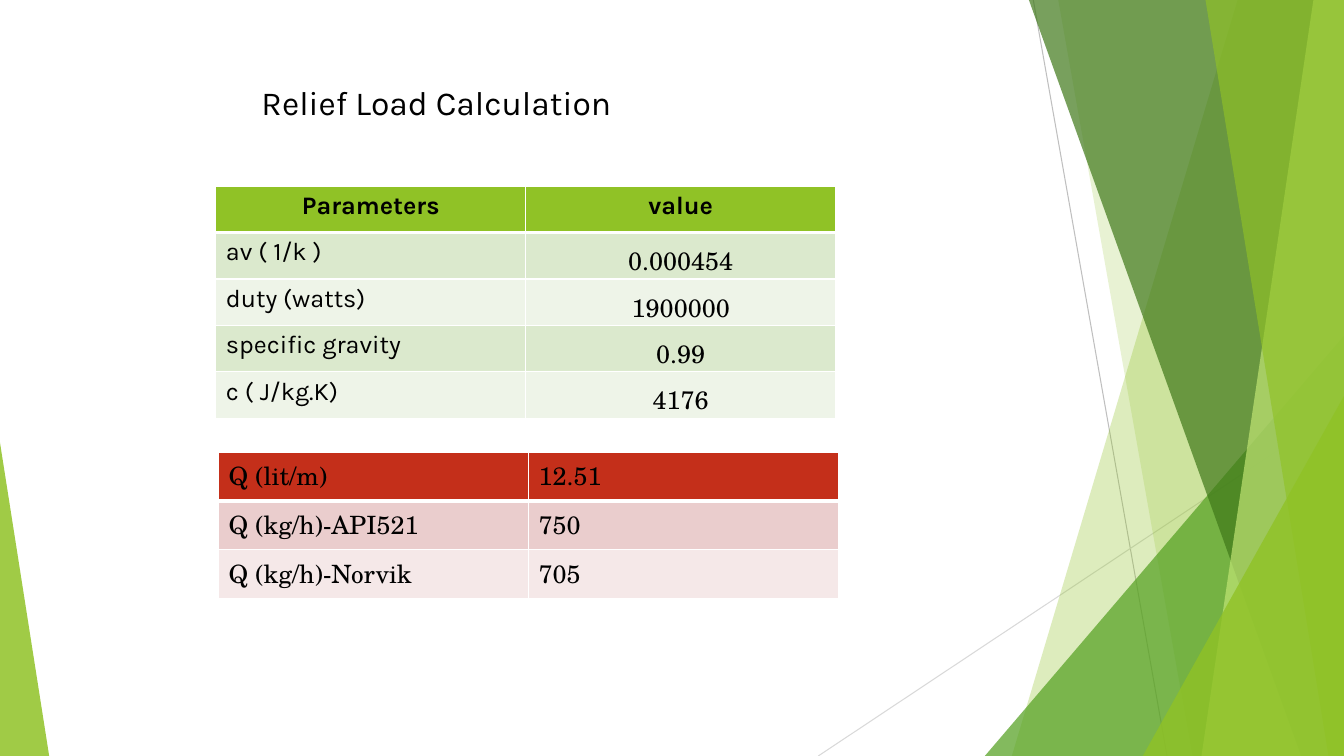
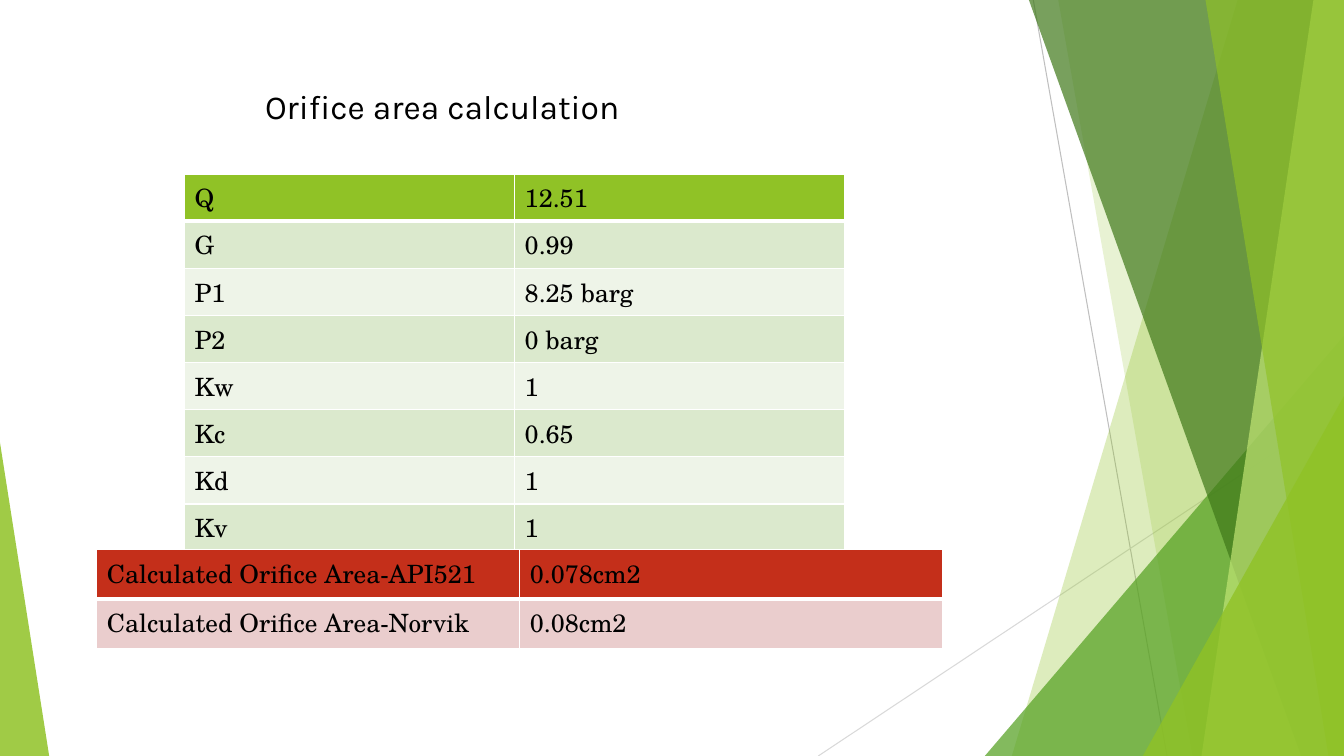
from lxml.etree import SubElement
from pptx import Presentation
from pptx.dml.color import RGBColor
from pptx.enum.shapes import MSO_CONNECTOR, MSO_SHAPE
from pptx.enum.text import MSO_ANCHOR, MSO_AUTO_SIZE, PP_ALIGN
from pptx.oxml.ns import qn
from pptx.util import Cm, Pt

BLACK = RGBColor(0x00, 0x00, 0x00)
WHITE = RGBColor(0xFF, 0xFF, 0xFF)
LIME = RGBColor(0x90, 0xC2, 0x26)
PALE_LIME = RGBColor(0xC0, 0xE4, 0x74)
GREEN = RGBColor(0x54, 0xA0, 0x21)
DARK_GREEN = RGBColor(0x3F, 0x78, 0x19)
GREY = RGBColor(0xBF, 0xBF, 0xBF)
LIGHT_GREY = RGBColor(0xD9, 0xD9, 0xD9)
GREEN_THEME = (LIME, RGBColor(0xDB, 0xE9, 0xCD), RGBColor(0xEE, 0xF4, 0xE8))
RED_THEME = (RGBColor(0xC4, 0x2F, 0x1A), RGBColor(0xEA, 0xCD, 0xCD), RGBColor(0xF5, 0xE8, 0xE8))
SANS = "Karla"
SERIF = "TeX Gyre Schola"
WIDTH, HEIGHT = 33.87, 19.05


def paint(shape, color, opacity):
    """Fill a borderless shape with a partly transparent colour."""
    shape.shadow.inherit = False
    shape.fill.solid()
    shape.fill.fore_color.rgb = color
    shape.line.fill.background()
    color_node = shape.element.spPr.find(".//" + qn("a:srgbClr"))
    SubElement(color_node, qn("a:alpha")).set("val", str(opacity * 1000))


def add_ray(page, start, end, color):
    """Draw a thin straight line."""
    ray = page.shapes.add_connector(MSO_CONNECTOR.STRAIGHT, *map(Cm, start + end))
    ray.line.color.rgb = color
    ray.line.width = Pt(0.75)
    SubElement(ray.element.spPr, qn("a:effectLst"))


def add_band(page, top_x, bottom_x, color, opacity):
    """Fill the full height from a slanted edge to the right side."""
    builder = page.shapes.build_freeform(Cm(top_x), 0)
    corners = [(WIDTH, 0), (WIDTH, HEIGHT), (bottom_x, HEIGHT)]
    builder.add_line_segments([(Cm(x), Cm(y)) for x, y in corners], close=True)
    paint(builder.convert_to_shape(), color, opacity)


def add_wedge(page, left, right, top, apex, color, opacity):
    """Draw a triangle standing on the bottom edge."""
    wedge = page.shapes.add_shape(
        MSO_SHAPE.ISOSCELES_TRIANGLE,
        Cm(left), Cm(top), Cm(right) - Cm(left), Cm(HEIGHT) - Cm(top))
    wedge.adjustments[0] = apex
    paint(wedge, color, opacity)


def add_facets(page):
    """Draw the facets that every slide shares."""
    add_ray(page, (26.04, 0), (29.41, HEIGHT), GREY)
    add_ray(page, (WIDTH, 10.24), (20.62, HEIGHT), LIGHT_GREY)
    add_band(page, 31.19, 25.5, LIME, 30)
    add_band(page, 26.67, 30.05, LIME, 20)
    add_wedge(page, 24.82, WIDTH, 8.46, 1, GREEN, 72)
    add_band(page, 25.93, 32.79, DARK_GREEN, 70)
    add_band(page, 33.1, 30.28, PALE_LIME, 70)
    add_band(page, 30.38, 33.48, LIME, 65)
    add_wedge(page, 28.8, WIDTH, 9.98, 1, LIME, 80)
    add_wedge(page, 0, 1.24, 11.15, 0, LIME, 85)


def add_span(para, text, font, size):
    """Add one black run."""
    span = para.add_run()
    span.text = text
    span.font.name = font
    span.font.size = Pt(size)
    span.font.bold = False
    span.font.color.rgb = BLACK


def set_title(page, text, left, top):
    """Place and format the title placeholder."""
    title = page.shapes.title
    title.left, title.top, title.width, title.height = Cm(left), Cm(top), Cm(16), Cm(1.2)
    frame = title.text_frame
    frame.auto_size = MSO_AUTO_SIZE.NONE
    frame.vertical_anchor = MSO_ANCHOR.MIDDLE
    frame.margin_left = frame.margin_right = frame.margin_top = frame.margin_bottom = 0
    para = frame.paragraphs[0]
    para.alignment = PP_ALIGN.LEFT
    add_span(para, text, SANS, 24)


def set_borders(cell, bottom):
    """Give a cell thin white borders and a bottom one of the stated width."""
    properties = cell._tc.get_or_add_tcPr()
    sides = [("L", 1), ("R", 1), ("T", 1), ("B", bottom)]
    for index, (side, width) in enumerate(sides):
        line = SubElement(properties, qn("a:ln" + side))
        line.set("w", str(Pt(width)))
        fill = SubElement(line, qn("a:solidFill"))
        SubElement(fill, qn("a:srgbClr")).set("val", str(WHITE))
        properties.insert(index, line)


def add_grid(page, rows, left, top, column_width, row_height, theme):
    """Add a two-column table with a strong first row and banded body."""
    frame = page.shapes.add_table(
        len(rows), 2, Cm(left), Cm(top), Cm(2 * column_width), Cm(row_height * len(rows)))
    table = frame.table
    table.first_row = table.horz_banding = False
    for column in table.columns:
        column.width = Cm(column_width)
    for row_index, texts in enumerate(rows):
        table.rows[row_index].height = Cm(row_height)
        for column_index, text in enumerate(texts):
            cell = table.cell(row_index, column_index)
            cell.fill.solid()
            cell.fill.fore_color.rgb = theme[0 if row_index == 0 else 2 - row_index % 2]
            set_borders(cell, 3 if row_index == 0 else 1)
            add_span(cell.text_frame.paragraphs[0], text, SERIF, 18)
    return table


def style_parameters(table):
    """Set a bold centred header, plain labels and centred low values."""
    for row_index, row in enumerate(table.rows):
        for column_index, cell in enumerate(row.cells):
            para = cell.text_frame.paragraphs[0]
            font = para.runs[0].font
            font.bold = row_index == 0
            if row_index == 0 or column_index == 1:
                para.alignment = PP_ALIGN.CENTER
            if row_index == 0 or column_index == 0:
                font.name = SANS
            else:
                cell.vertical_anchor = MSO_ANCHOR.BOTTOM
                cell.margin_left = cell.margin_right = cell.margin_top = Cm(0.03)
                cell.margin_bottom = 0


def fill_relief_load(page):
    """Fill the relief load slide."""
    set_title(page, "Relief Load Calculation", 6.59, 1.97)
    parameters = [
        ("Parameters", "value"),
        ("av ( 1/k )", "0.000454"),
        ("duty (watts)", "1900000"),
        ("specific gravity", "0.99"),
        ("c ( J/kg.K)", "4176"),
    ]
    style_parameters(add_grid(page, parameters, 5.44, 4.69, 7.81, 1.17, GREEN_THEME))
    loads = [("Q (lit/m)", "12.51"), ("Q (kg/h)-API521", "750"), ("Q (kg/h)-Norvik", "705")]
    add_grid(page, loads, 5.51, 11.39, 7.81, 1.23, RED_THEME)


def fill_orifice_area(page):
    """Fill the orifice area slide."""
    set_title(page, "Orifice area calculation", 6.68, 2.07)
    factors = [
        ("Q", "12.51"),
        ("G", "0.99"),
        ("P1", "8.25 barg"),
        ("P2", "0 barg"),
        ("Kw", "1"),
        ("Kc", "0.65"),
        ("Kd", "1"),
        ("Kv", "1"),
    ]
    add_grid(page, factors, 4.65, 4.39, 8.32, 1.18, GREEN_THEME)
    areas = [
        ("Calculated Orifice Area-API521", "0.078cm2"),
        ("Calculated Orifice Area-Norvik", "0.08cm2"),
    ]
    add_grid(page, areas, 2.44, 13.85, 10.66, 1.25, RED_THEME)


def main():
    """Build and save the deck."""
    deck = Presentation()
    deck.slide_width, deck.slide_height = Cm(WIDTH), Cm(HEIGHT)
    layout = deck.slide_layouts.get_by_name("Title Only")
    for fill_page in (fill_relief_load, fill_orifice_area):
        page = deck.slides.add_slide(layout)
        add_facets(page)
        fill_page(page)
    deck.save("out.pptx")


if __name__ == "__main__":
    main()
